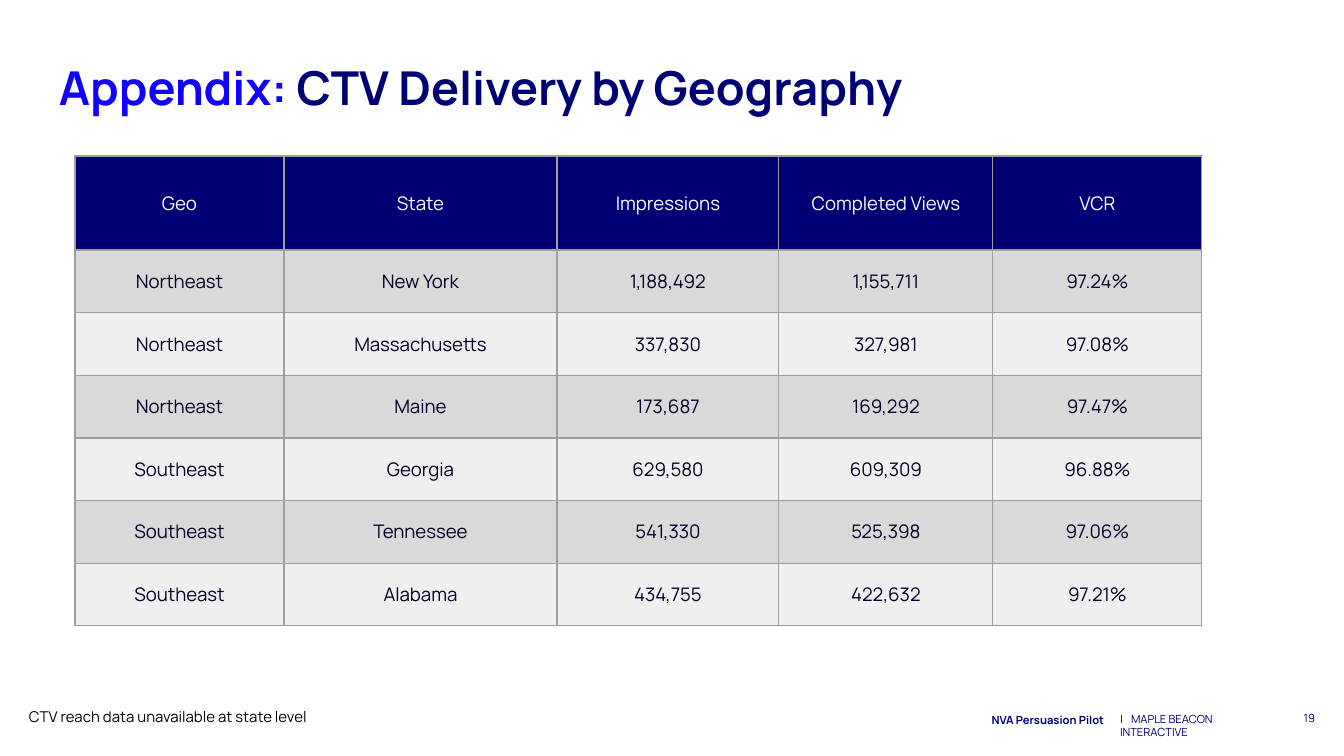
import dataclasses
import typing

import pptx
import pptx.dml.color
import pptx.enum.text
import pptx.oxml
import pptx.oxml.ns
import pptx.util

ALIGN = pptx.enum.text.PP_ALIGN
ANCHOR = pptx.enum.text.MSO_ANCHOR
SCALE = 914400 / 134.4  # EMU in one px


@dataclasses.dataclass(frozen=True)
class Theme:
    face: str = "Manrope"
    navy: str = "000075"
    blue: str = "1100FF"
    ink: str = "000028"
    black: str = "000000"
    white: str = "FFFFFF"
    rule: str = "9E9E9E"
    bands: tuple[str, str] = ("D9D9D9", "EFEFEF")
    title: int = 25
    body: int = 10
    note: int = 8
    foot: int = 6
    line: float = 0.75


class Run(typing.NamedTuple):
    text: str
    size: int
    color: str
    bold: bool = False


class Label(typing.NamedTuple):
    box: tuple[int, int, int, int]
    runs: list[Run]
    align: ALIGN = ALIGN.LEFT
    anchor: ANCHOR = ANCHOR.TOP
    inset: tuple[int, int] = (13, 13)
    space: float = 1.0
    tab: int = 0


THEME = Theme()

LABELS = [
    # Footer
    Label((1111, 707, 170, 24),
          [Run("|\tMAPLE BEACON INTERACTIVE", THEME.foot, THEME.navy)],
          inset=(9, 5), tab=11),
    Label((1247, 689, 81, 58), [Run("19", THEME.foot, THEME.navy)],
          ALIGN.RIGHT, ANCHOR.MIDDLE),
    Label((164, 707, 953, 24),
          [Run("NVA Persuasion Pilot", THEME.foot, THEME.navy, True)],
          ALIGN.RIGHT, ANCHOR.MIDDLE, space=1.15),
    # Title
    Label((46, 46, 1219, 75),
          [Run("Appendix: ", THEME.title, THEME.blue, True),
           Run("CTV Delivery by Geography", THEME.title, THEME.navy, True)]),
    # Note
    Label((16, 699, 841, 46),
          [Run("CTV reach data unavailable at state level",
               THEME.note, THEME.black)]),
]

HEAD = ("Geo", "State", "Impressions", "Completed Views", "VCR")
ROWS = [
    ("Northeast", "New York", "1,188,492", "1,155,711", "97.24%"),
    ("Northeast", "Massachusetts", "337,830", "327,981", "97.08%"),
    ("Northeast", "Maine", "173,687", "169,292", "97.47%"),
    ("Southeast", "Georgia", "629,580", "609,309", "96.88%"),
    ("Southeast", "Tennessee", "541,330", "525,398", "97.06%"),
    ("Southeast", "Alabama", "434,755", "422,632", "97.21%"),
]
LEFT, TOP = 75, 156
COLS = (209, 273, 222, 214, 209)
HEAD_H, BODY_H = 94, 376


def px(size: int) -> int:
    return round(size * SCALE)


def rgb(code: str) -> pptx.dml.color.RGBColor:
    return pptx.dml.color.RGBColor.from_string(code)


def apply(thing: typing.Any, values: dict[str, typing.Any]) -> None:
    for name, value in values.items():
        setattr(thing, name, value)


def add_run(para: typing.Any, item: Run) -> None:
    run = para.add_run()
    run.text = item.text
    apply(run.font, {"name": THEME.face, "size": pptx.util.Pt(item.size),
                     "bold": item.bold})
    run.font.color.rgb = rgb(item.color)


def add_tab(para: typing.Any, stop: int) -> None:
    space = pptx.oxml.ns.nsdecls("a")
    tabs = f'<a:tabLst {space}><a:tab pos="{px(stop)}" algn="l"/></a:tabLst>'
    para._p.get_or_add_pPr().append(pptx.oxml.parse_xml(tabs))


def add_label(slide: typing.Any, item: Label) -> None:
    frame = slide.shapes.add_textbox(*map(px, item.box)).text_frame
    side, edge = map(px, item.inset)
    apply(frame, {"word_wrap": True, "vertical_anchor": item.anchor,
                  "margin_left": side, "margin_right": side,
                  "margin_top": edge, "margin_bottom": edge})
    para = frame.paragraphs[0]
    if item.tab:
        add_tab(para, item.tab)
    apply(para, {"alignment": item.align, "line_spacing": item.space})
    for run in item.runs:
        add_run(para, run)


def add_rules(cell: typing.Any) -> None:
    space = pptx.oxml.ns.nsdecls("a")
    width = pptx.util.Pt(THEME.line)
    for side in "LRTB":
        cell._tc.get_or_add_tcPr().append(pptx.oxml.parse_xml(
            f'<a:ln{side} {space} w="{width}"><a:solidFill>'
            f'<a:srgbClr val="{THEME.rule}"/></a:solidFill></a:ln{side}>'))


def fill_cell(cell: typing.Any, text: str, color: str, back: str) -> None:
    pad = px(13)
    apply(cell, {"vertical_anchor": ANCHOR.MIDDLE,
                 "margin_left": pad, "margin_right": pad,
                 "margin_top": pad, "margin_bottom": pad})
    add_rules(cell)
    cell.fill.solid()
    cell.fill.fore_color.rgb = rgb(back)
    para = cell.text_frame.paragraphs[0]
    para.alignment = ALIGN.CENTER
    add_run(para, Run(text, THEME.body, color))


def add_grid(slide: typing.Any) -> None:
    lines = [HEAD, *ROWS]
    grid = slide.shapes.add_table(
        len(lines), len(COLS), px(LEFT), px(TOP),
        px(sum(COLS)), px(HEAD_H + BODY_H)).table
    for col, width in zip(grid.columns, COLS):
        col.width = px(width)
    for r, line in enumerate(lines):
        if r == 0:
            height, color, back = px(HEAD_H), THEME.white, THEME.navy
        else:
            height = px(BODY_H) // len(ROWS)
            color, back = THEME.ink, THEME.bands[(r - 1) % 2]
        grid.rows[r].height = height
        for c, text in enumerate(line):
            fill_cell(grid.cell(r, c), text, color, back)


def main() -> None:
    deck = pptx.Presentation()
    apply(deck, {"slide_width": px(1344), "slide_height": px(756)})
    slide = deck.slides.add_slide(deck.slide_layouts[6])
    for item in LABELS:
        add_label(slide, item)
    add_grid(slide)
    deck.save("out.pptx")


if __name__ == "__main__":
    main()
